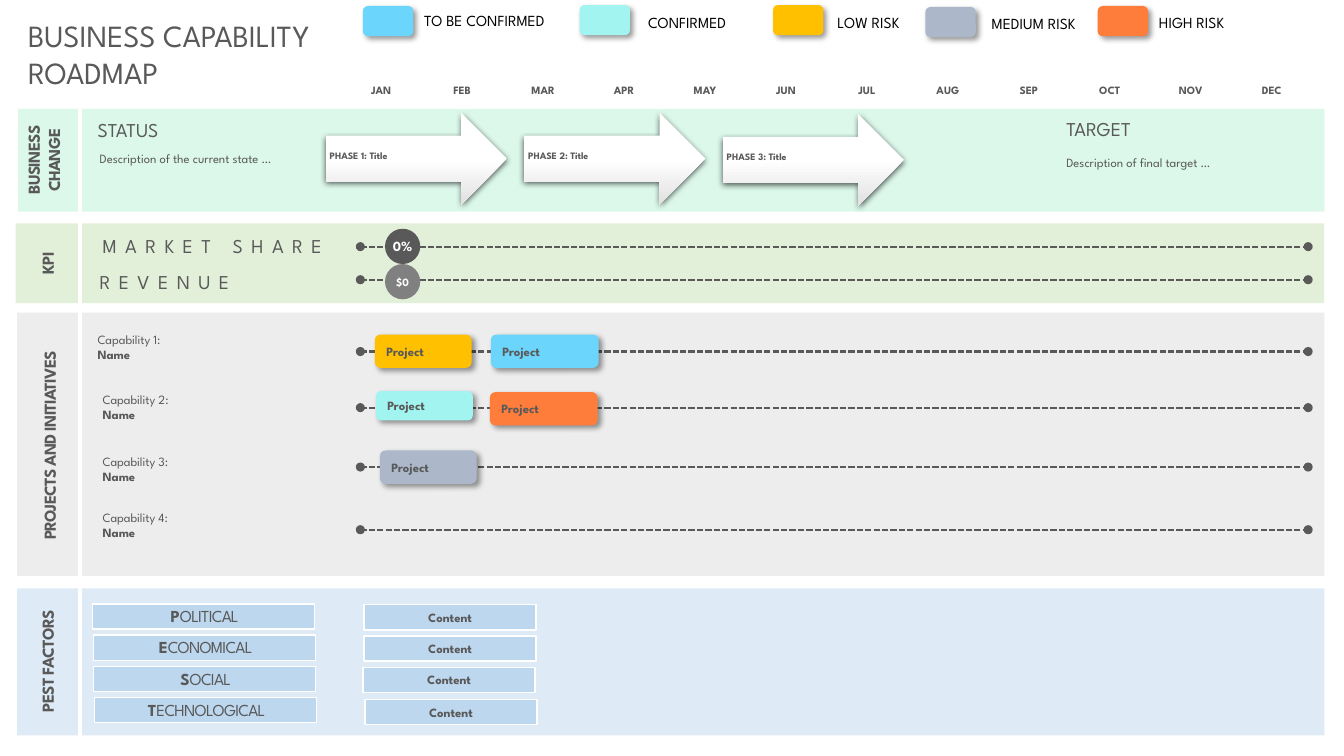
from dataclasses import dataclass

import lxml.etree
import pptx
import pptx.dml.color
import pptx.enum.dml
import pptx.enum.shapes
import pptx.enum.text
import pptx.oxml.ns
import pptx.util

Pt = pptx.util.Pt
RGBColor = pptx.dml.color.RGBColor
Shape = pptx.enum.shapes.MSO_SHAPE
Align = pptx.enum.text.PP_ALIGN
Anchor = pptx.enum.text.MSO_ANCHOR
qn = pptx.oxml.ns.qn

FACE = "League Spartan"
INK = RGBColor(0x59, 0x59, 0x59)
GRAY = RGBColor(0x80, 0x80, 0x80)
BLACK = RGBColor(0, 0, 0)
WHITE = RGBColor(0xFF, 0xFF, 0xFF)
SILVER = RGBColor(0xE1, 0xE1, 0xE1)
MINT = RGBColor(0xDC, 0xF8, 0xEB)
GREEN = RGBColor(0xE2, 0xF0, 0xD9)
PALE = RGBColor(0xED, 0xED, 0xED)
BLUE = RGBColor(0xDE, 0xEB, 0xF7)
PANEL = RGBColor(0xBD, 0xD7, 0xEE)
SKY = RGBColor(0x6C, 0xD5, 0xFC)
AQUA = RGBColor(0xA1, 0xF4, 0xEF)
GOLD = RGBColor(0xFF, 0xC0, 0x00)
SLATE = RGBColor(0xAC, 0xB8, 0xCA)
ORANGE = RGBColor(0xFF, 0x7D, 0x3A)


@dataclass
class Box:
    x: float
    y: float
    w: float
    h: float


@dataclass
class Style:
    size: float
    bold: bool = False
    color: RGBColor = INK
    align: Align = Align.LEFT
    gap: float = 0


@dataclass
class Band:
    box: Box
    color: RGBColor
    title: str
    label: Box


@dataclass
class Key:
    text: str
    color: RGBColor
    x: float
    y: float
    label: Box


@dataclass
class Task:
    box: Box
    color: RGBColor


@dataclass
class Factor:
    word: str
    x: float
    y: float
    label: Box
    side: float
    top: float


HEAD = Style(12, True, align=Align.CENTER, gap=-0.5)
SMALL = Style(9)
BOLD = Style(9, True)
MID = Style(9, True, align=Align.CENTER)
LARGE = Style(14)
WIDE = Style(14, gap=6)

BANDS = [
    Band(Box(12.96, 77.8, 933.1, 73.4), MINT, "BUSINESS CHANGE", Box(-2.9, 96.5, 67.7, 36)),
    Band(Box(11.2, 159.6, 934.6, 56.9), GREEN, "KPI", Box(7.2, 177.1, 53.3, 21.6)),
    Band(Box(12.2, 223.4, 933.8, 188), PALE, "PROJECTS AND INITIATIVES", Box(-59.8, 307.4, 190.1, 21.6)),
    Band(Box(12.2, 420.2, 933.8, 105.1), BLUE, "PEST FACTORS", Box(-18.7, 461.5, 105.1, 21.6)),
]
KEYS = [
    Key("TO BE CONFIRMED", SKY, 259.2, 4.3, Box(295.9, 4.3, 120.2, 20.9)),
    Key("CONFIRMED", AQUA, 414, 3.6, Box(455.8, 5.8, 89.3, 20.9)),
    Key("LOW RISK", GOLD, 552.2, 3.6, Box(591.1, 5.8, 64.1, 20.9)),
    Key("MEDIUM RISK", SLATE, 661, 5, Box(701.3, 6.5, 89.3, 20.9)),
    Key("HIGH RISK", ORANGE, 784.1, 4.3, Box(820.8, 5.8, 86.4, 20.9)),
]
TASKS = [
    Task(Box(267.8, 239, 69.1, 23.8), GOLD),
    Task(Box(350.6, 239, 77, 23.8), SKY),
    Task(Box(268.6, 279.4, 69.1, 20.9), AQUA),
    Task(Box(349.9, 280.1, 77, 23.8), ORANGE),
    Task(Box(271.4, 321.8, 69.1, 23.8), SLATE),
]
FACTORS = [
    Factor("POLITICAL", 66.2, 431.3, Box(67.7, 429.1, 157, 21.6), 259.9, 432),
    Factor("ECONOMICAL", 67, 453.6, Box(67, 451.4, 159.8, 21.6), 259.9, 454.3),
    Factor("SOCIAL", 67, 475.9, Box(67, 474.5, 159.8, 21.6), 259.2, 476.6),
    Factor("TECHNOLOGICAL", 67.7, 498.2, Box(67.7, 496.1, 159.8, 21.6), 260.6, 499.7),
]
NOTES = [
    ("BUSINESS CAPABILITY \vROADMAP", Box(13, 8.6, 244.1, 60.5), Style(22)),
    ("STATUS", Box(62.6, 80.6, 197.3, 24.5), LARGE),
    ("Description of the current state …", Box(64.1, 104.4, 180.7, 18), SMALL),
    ("TARGET", Box(754.6, 79.9, 191.5, 24.5), LARGE),
    ("Description of final target …", Box(754.6, 107.3, 176.4, 18), SMALL),
    ("MARKET SHARE", Box(66.2, 163.4, 197.3, 24.5), WIDE),
    ("REVENUE", Box(64.1, 189.4, 197.3, 24.5), WIDE),
]
TRACKS = [176.2, 199.8, 251.1, 291.2, 333.6, 378.4]
NAMES = [(62.6, 233.3), (66.2, 276.5), (66.2, 320.4), (66.2, 360.7)]
PHASES = [(232.6, 80.6), (374.4, 80.6), (516.2, 81.4)]
MONTHS = "JAN FEB MAR APR MAY JUN JUL AUG SEP OCT NOV DEC".split()


def set_font(para, style: Style) -> None:
    para.alignment = style.align
    font = para.font
    font.name, font.size, font.bold = FACE, Pt(style.size), style.bold
    font.color.rgb = style.color
    if style.gap:
        para._p.pPr.defRPr.set("spc", str(round(style.gap * 100)))


def place(box: Box) -> tuple:
    return Pt(box.x), Pt(box.y), Pt(box.w), Pt(box.h)


def add_note(slide, text: str, box: Box, style: Style, turn: float = 0):
    note = slide.shapes.add_textbox(*place(box))
    note.rotation = turn
    frame = note.text_frame
    frame.word_wrap = True
    frame.auto_size = pptx.enum.text.MSO_AUTO_SIZE.SHAPE_TO_FIT_TEXT
    frame.text = text
    for para in frame.paragraphs:
        set_font(para, style)
    return note


def add_shape(slide, kind: Shape, box: Box, color: RGBColor, edge: RGBColor | None = None):
    shape = slide.shapes.add_shape(kind, *place(box))
    shape.shadow.inherit = False
    shape.fill.solid()
    shape.fill.fore_color.rgb = color
    if edge is None:
        shape.line.fill.background()
    else:
        shape.line.color.rgb = edge
        shape.line.width = Pt(1)
    return shape


def add_text(shape, text: str, style: Style, left: float = 7.2, foot: float = 3.6) -> None:
    frame = shape.text_frame
    frame.word_wrap = True
    frame.vertical_anchor = Anchor.MIDDLE
    frame.margin_left, frame.margin_right = Pt(left), Pt(left)
    frame.margin_top, frame.margin_bottom = 0, Pt(foot)
    frame.text = text
    set_font(frame.paragraphs[0], style)


def add_shadow(shape, alpha: int, blur: float, dist: float, angle: int) -> None:
    glow = shape._element.spPr.find(qn("a:effectLst"))
    outer = lxml.etree.SubElement(glow, qn("a:outerShdw"), blurRad=str(Pt(blur)),
                                  dist=str(Pt(dist)), dir=str(angle * 60000), algn="tl", rotWithShape="0")
    color = lxml.etree.SubElement(outer, qn("a:srgbClr"), val="000000")
    lxml.etree.SubElement(color, qn("a:alpha"), val=str(alpha * 1000))


def add_card(slide, box: Box, color: RGBColor):
    card = add_shape(slide, Shape.ROUNDED_RECTANGLE, box, color)
    add_shadow(card, 40, 4, 3, 45)
    return card


def add_line(slide, start: tuple, end: tuple, color: RGBColor, width: float):
    ends = [Pt(v) for v in start + end]
    line = slide.shapes.add_connector(pptx.enum.shapes.MSO_CONNECTOR.STRAIGHT, *ends)
    line.line.color.rgb = color
    line.line.width = Pt(width)
    lxml.etree.SubElement(line._element.spPr, qn("a:effectLst"))
    return line


def add_track(slide, y: float) -> None:
    first, last, size = 257.4, 934.4, 6.5
    line = add_line(slide, (first, y), (last, y), INK, 1.5)
    line.line.dash_style = pptx.enum.dml.MSO_LINE.SQUARE_DOT
    for x in (first, last):
        add_shape(slide, Shape.OVAL, Box(x - size / 2, y - size / 2, size, size), INK)


def add_phase(slide, text: str, x: float, y: float) -> None:
    arrow = add_shape(slide, Shape.RIGHT_ARROW, Box(x, y, 129.6, 65.5), WHITE)
    arrow.fill.gradient()
    arrow.fill.gradient_angle = 270
    for stop, color, spot in zip(arrow.fill.gradient_stops, (WHITE, SILVER), (0.5, 1)):
        stop.color.rgb = color
        stop.position = spot
    add_shadow(arrow, 63, 4.5, 1.5, 90)
    add_text(arrow, text, Style(7, True), 2.9, 4)


def add_months(slide) -> None:
    table = slide.shapes.add_table(1, len(MONTHS), Pt(243.4), Pt(56.9), Pt(694.1), Pt(16.6)).table
    table.first_row = table.horz_banding = False
    for cell, month in zip(table.rows[0].cells, MONTHS):
        cell.fill.solid()
        cell.fill.fore_color.rgb = WHITE
        cell.vertical_anchor = Anchor.MIDDLE
        cell.text = month
        set_font(cell.text_frame.paragraphs[0], Style(8, True, align=Align.CENTER))


def add_factor(slide, item: Factor) -> None:
    add_shape(slide, Shape.RECTANGLE, Box(item.x, item.y, 158.4, 18), PANEL, WHITE)
    para = add_note(slide, item.word[0], item.label, HEAD).text_frame.paragraphs[0]
    rest = para.add_run()
    rest.text = item.word[1:]
    rest.font.bold = False
    panel = add_shape(slide, Shape.RECTANGLE, Box(item.side, item.top, 123.1, 18), PANEL, WHITE)
    add_text(panel, "Content", MID, foot=0)


def main() -> None:
    deck = pptx.Presentation()
    deck.slide_width, deck.slide_height = Pt(960), Pt(540)
    slide = deck.slides.add_slide(deck.slide_layouts[6])
    for band in BANDS:
        add_shape(slide, Shape.RECTANGLE, band.box, band.color)
        add_note(slide, band.title, band.label, HEAD, 270)
    add_line(slide, (56.9, 70.6), (56.9, 538.6), WHITE, 3)
    for y in TRACKS:
        add_track(slide, y)
    for text, box, style in NOTES:
        add_note(slide, text, box, style)
    for count, (x, y) in enumerate(NAMES, 1):
        note = add_note(slide, f"Capability {count}:\nName", Box(x, y, 180.7, 28.8), SMALL)
        note.text_frame.paragraphs[1].font.bold = True
    for text, y, color, size in (("0%", 163.4, INK, 10), ("$0", 188.6, GRAY, 8)):
        disc = add_shape(slide, Shape.OVAL, Box(275, y, 25.2, 25.2), color)
        add_text(disc, text, Style(size, True, WHITE, Align.CENTER), 0, 0)
        disc.text_frame.word_wrap = False
    add_months(slide)
    for key in KEYS:
        add_card(slide, Box(key.x, key.y, 36, 21.6), key.color)
        add_note(slide, key.text, key.label, Style(11, color=BLACK))
    for task in TASKS:
        add_text(add_card(slide, task.box, task.color), "Project", BOLD, foot=0)
    for item in FACTORS:
        add_factor(slide, item)
    for count, (x, y) in enumerate(PHASES, 1):
        add_phase(slide, f"PHASE {count}: Title", x, y)
    deck.save("out.pptx")


if __name__ == "__main__":
    main()
